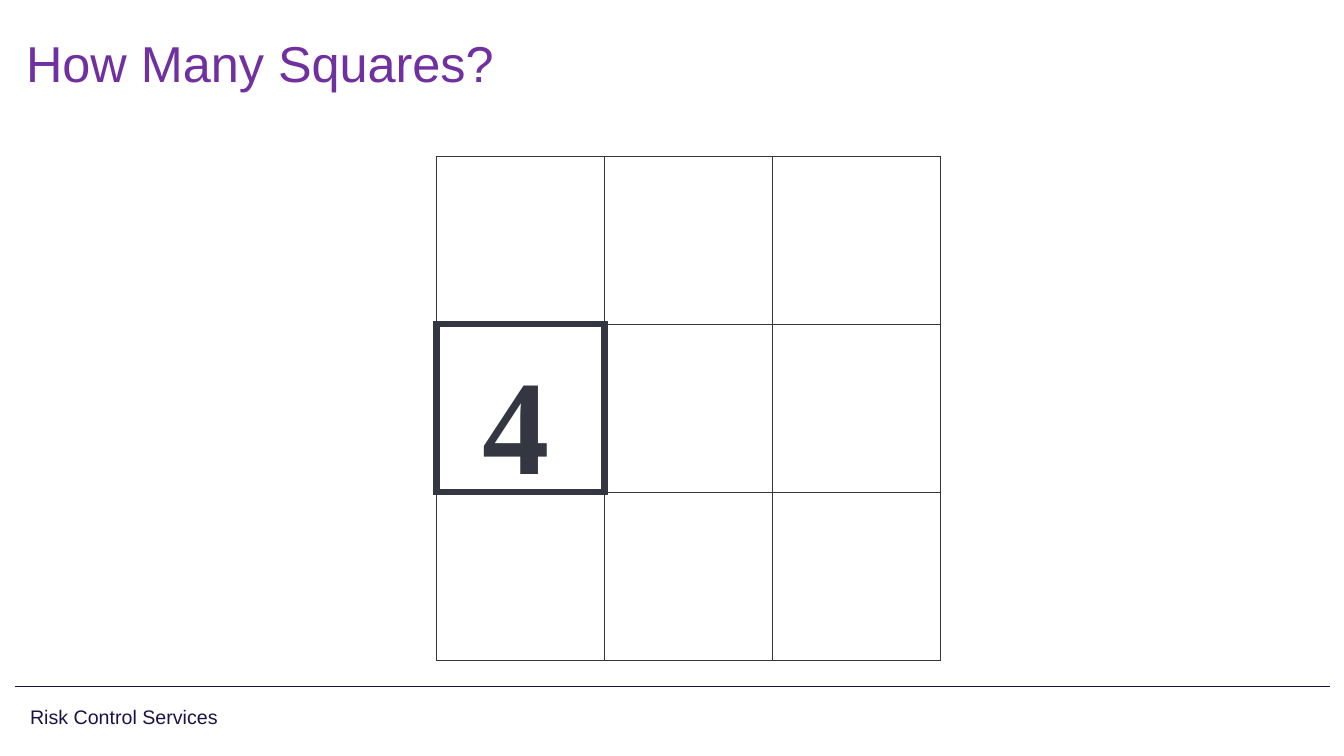
"""Build the "How Many Squares?" puzzle slide with a three by three grid."""
import dataclasses

import lxml.etree
import pptx
import pptx.dml.color
import pptx.enum.shapes
import pptx.enum.text
import pptx.oxml.ns
import pptx.slide
import pptx.util

Inches = pptx.util.Inches
Anchor = pptx.enum.text.MSO_ANCHOR
Align = pptx.enum.text.PP_ALIGN

NAVY = "1A1446"
SLATE = "343741"
PURPLE = "7030A0"

GRID_SIZE = 3
GRID_LEFT = 4.33
GRID_TOP = 1.55
CELL_SIDE = 5 / 3
NUMBERED_CELL = (1, 0)


@dataclasses.dataclass(frozen=True)
class Label:
    """A single-line text box with its place and format."""
    text: str
    left: float
    top: float
    width: float
    height: float
    size: float
    color: str
    font: str = "Arial"
    bold: bool = False
    anchor: Anchor = Anchor.MIDDLE
    alignment: Align = Align.LEFT
    line_spacing: float = 0.9


LABELS = [
    Label("Risk Control Services", 0.2, 6.91, 4.37, 0.42, 14, NAVY),
    Label("4", 4.33, 3.33, 1.58, 1.7, 96, SLATE, font="Times New Roman", bold=True,
          anchor=Anchor.TOP, alignment=Align.CENTER, line_spacing=1.0),
    Label("How Many Squares?", 0.16, 0.25, 11.26, 0.82, 36, PURPLE),
]


def rgb(color: str) -> pptx.dml.color.RGBColor:
    """Turn a hex string into a colour."""
    return pptx.dml.color.RGBColor.from_string(color)


def apply_format(target: object, values: dict[str, object]) -> None:
    """Set each named attribute on the target."""
    for name, value in values.items():
        setattr(target, name, value)


def add_label(slide: pptx.slide.Slide, label: Label) -> None:
    """Draw one label as a text box."""
    shape = slide.shapes.add_textbox(Inches(label.left), Inches(label.top),
                                     Inches(label.width), Inches(label.height))
    apply_format(shape.text_frame, {"word_wrap": True, "vertical_anchor": label.anchor})
    paragraph = shape.text_frame.paragraphs[0]
    apply_format(paragraph, {
        "text": label.text,
        "alignment": label.alignment,
        "line_spacing": label.line_spacing,
    })
    font = paragraph.runs[0].font
    apply_format(font, {
        "name": label.font,
        "size": pptx.util.Pt(label.size),
        "bold": label.bold,
    })
    font.color.rgb = rgb(label.color)


def add_cell(slide: pptx.slide.Slide, row: int, column: int) -> None:
    """Draw one sharp-cornered grid square, with a heavy border on the numbered one."""
    shape = slide.shapes.add_shape(
        pptx.enum.shapes.MSO_SHAPE.RECTANGLE,
        Inches(GRID_LEFT + column * CELL_SIDE), Inches(GRID_TOP + row * CELL_SIDE),
        Inches(CELL_SIDE), Inches(CELL_SIDE))
    shape.shadow.inherit = False
    shape.fill.background()
    shape.line.color.rgb = rgb(SLATE)
    shape.line.width = pptx.util.Pt(4.5 if (row, column) == NUMBERED_CELL else 0.75)
    outline = shape._element.spPr.find(pptx.oxml.ns.qn("a:ln"))
    lxml.etree.SubElement(outline, pptx.oxml.ns.qn("a:miter"), lim="800000")


def add_footer_rule(slide: pptx.slide.Slide) -> None:
    """Draw the line above the footer."""
    rule = slide.shapes.add_connector(pptx.enum.shapes.MSO_CONNECTOR.STRAIGHT,
                                      Inches(0.15), Inches(6.81), Inches(13.19), Inches(6.81))
    rule.line.color.rgb = rgb(NAVY)
    rule.line.width = pptx.util.Pt(1)
    lxml.etree.SubElement(rule._element.spPr, pptx.oxml.ns.qn("a:effectLst"))


def main() -> None:
    """Build and save the presentation."""
    presentation = pptx.Presentation()
    apply_format(presentation, {"slide_width": Inches(13.33), "slide_height": Inches(7.5)})
    slide = presentation.slides.add_slide(presentation.slide_layouts[6])
    add_footer_rule(slide)
    for row in range(GRID_SIZE):
        for column in range(GRID_SIZE):
            add_cell(slide, row, column)
    for label in LABELS:
        add_label(slide, label)
    presentation.save("out.pptx")


if __name__ == "__main__":
    main()
